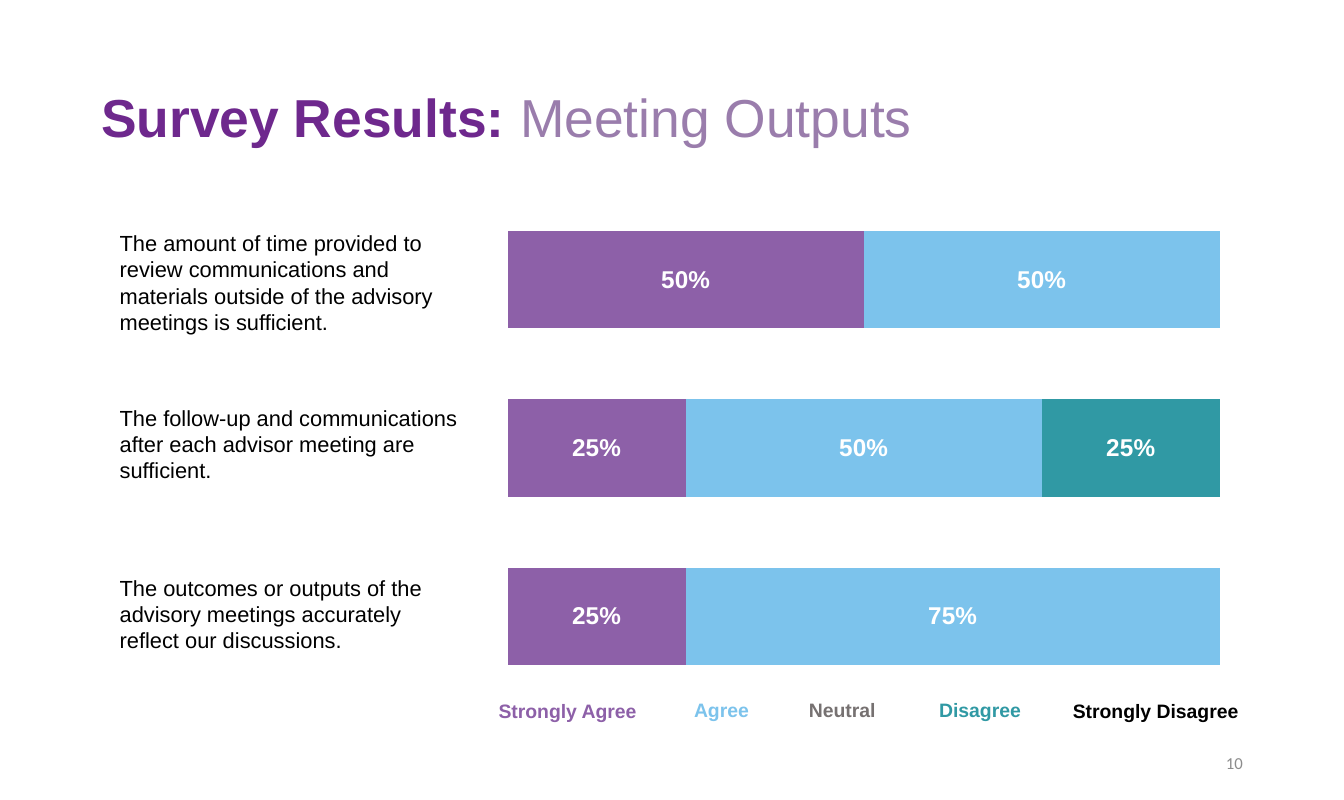
"""Build the survey results slide on meeting outputs."""
from lxml.etree import SubElement
from pptx import Presentation
from pptx.chart.data import CategoryChartData
from pptx.dml.color import RGBColor
from pptx.enum.chart import XL_CHART_TYPE, XL_LABEL_POSITION
from pptx.enum.text import MSO_ANCHOR, MSO_AUTO_SIZE, PP_ALIGN
from pptx.oxml.ns import qn
from pptx.util import Inches, Pt

presentation = Presentation()
presentation.slide_width = Inches(15.38)
presentation.slide_height = Inches(9.15)
slide = presentation.slides.add_slide(presentation.slide_layouts[6])
column = presentation.slide_width / 100
row = presentation.slide_height / 100

PURPLE, BLUE, TEAL, BLACK, WHITE = "8D60A8", "7CC3EC", "3099A4", "000000", "FFFFFF"


def set_font(font, size, color, bold=False, name="Arial"):
    for attribute, value in {"size": Pt(size), "bold": bold, "name": name}.items():
        setattr(font, attribute, value)
    font.color.rgb = RGBColor.from_string(color)


def add_text(left, top, width, height, runs, frame_format, paragraph_format):
    shape = slide.shapes.add_textbox(
        int(left * column), int(top * row), int(width * column), int(height * row))
    frame = shape.text_frame
    paragraph = frame.paragraphs[0]
    for target, settings in ((frame, {"word_wrap": True, **frame_format}),
                             (paragraph, paragraph_format)):
        for attribute, value in settings.items():
            setattr(target, attribute, value)
    for text, *font_values in runs:
        run = paragraph.add_run()
        run.text = text
        set_font(run.font, *font_values)


middle = {"vertical_anchor": MSO_ANCHOR.MIDDLE}
growing = {"auto_size": MSO_AUTO_SIZE.SHAPE_TO_FIT_TEXT}

title_runs = [("Survey Results: ", 44, "6E288D", True), ("Meeting Outputs", 44, "9A7DAC")]
add_text(6.89, 5.36, 86.28, 19.34, title_runs, middle, {"line_spacing": 0.9})
add_text(70.61, 92.68, 22.5, 5.36, [("10", 13.8, "8C8C8C", False, "Calibri")],
         middle, {"alignment": PP_ALIGN.RIGHT})

answers = [
    ("Series 1", (0.25, 0.25, 0.5), PURPLE),
    ("Series 2", (0.75, 0.5, 0.5), BLUE),
    ("Series 3", (0, 0, 0), "FFC000"),
    ("Series 4", (0, 0.25, 0), TEAL),
    ("Series 5", (0, 0, 0), "5B9BD5"),
]
chart_data = CategoryChartData(number_format="0%")
chart_data.categories = ["1", "2", "3"]
for name, values, color in answers:
    chart_data.add_series(name, values)
chart = slide.shapes.add_chart(
    XL_CHART_TYPE.BAR_STACKED_100, int(36.67 * column), int(23.17 * row),
    int(55.2 * column), int(65.68 * row), chart_data).chart
set_font(chart.font, 14, BLACK)
chart.has_legend = chart.has_title = False
for axis in (chart.category_axis, chart.value_axis):
    axis.visible = False
    axis.has_major_gridlines = False
chart.value_axis.tick_labels.number_format = "0%"
chart.value_axis.tick_labels.number_format_is_linked = False

plot = chart.plots[0]
for attribute, value in {"gap_width": 73, "overlap": 100, "vary_by_categories": False}.items():
    setattr(plot, attribute, value)
for series, (name, values, color) in zip(plot.series, answers):
    series.format.fill.solid()
    series.format.fill.fore_color.rgb = RGBColor.from_string(color)
    if any(values):
        labels = series.data_labels
        label_format = {"show_value": True, "position": XL_LABEL_POSITION.CENTER,
                        "number_format": "0%;;", "number_format_is_linked": False}
        for attribute, value in label_format.items():
            setattr(labels, attribute, value)
        set_font(labels.font, 20, WHITE, True)

plot_area = chart.element.find(".//" + qn("c:plotArea"))
layout = plot_area.find(qn("c:layout"))
if layout is None:
    layout = SubElement(plot_area, qn("c:layout"))
    plot_area.insert(0, layout)
manual_layout = SubElement(layout, qn("c:manualLayout"))
for tag, value in (("layoutTarget", "inner"), ("xMode", "edge"), ("yMode", "edge"),
                   ("x", "0.02"), ("y", "0.02"), ("w", "0.96"), ("h", "0.96")):
    SubElement(manual_layout, qn("c:" + tag)).set("val", value)

statements = [
    (28.2, 14.32, "The amount of time provided to review communications and materials "
                  "outside of the advisory meetings is sufficient."),
    (50.05, 11.04, "The follow-up and communications after each advisor meeting are sufficient."),
    (71.26, 11.04, "The outcomes or outputs of the advisory meetings accurately "
                   "reflect our discussions."),
]
for top, height, statement in statements:
    add_text(8.26, top, 27.11, height, [(statement, 18, BLACK)], growing, {})

legend = [
    ("Strongly Agree", 36.35, 86.89, 11.77, PURPLE),
    ("Agree", 50.85, 86.78, 5.66, BLUE),
    ("Neutral", 59.23, 86.78, 6.89, "767171"),
    ("Disagree", 68.92, 86.78, 8, TEAL),
    ("Strongly Disagree", 79.06, 86.89, 13.85, BLACK),
]
for answer, left, top, width, color in legend:
    add_text(left, top, width, 4.04, [(answer, 16, color, True)],
             growing, {"alignment": PP_ALIGN.CENTER})

presentation.save("out.pptx")
